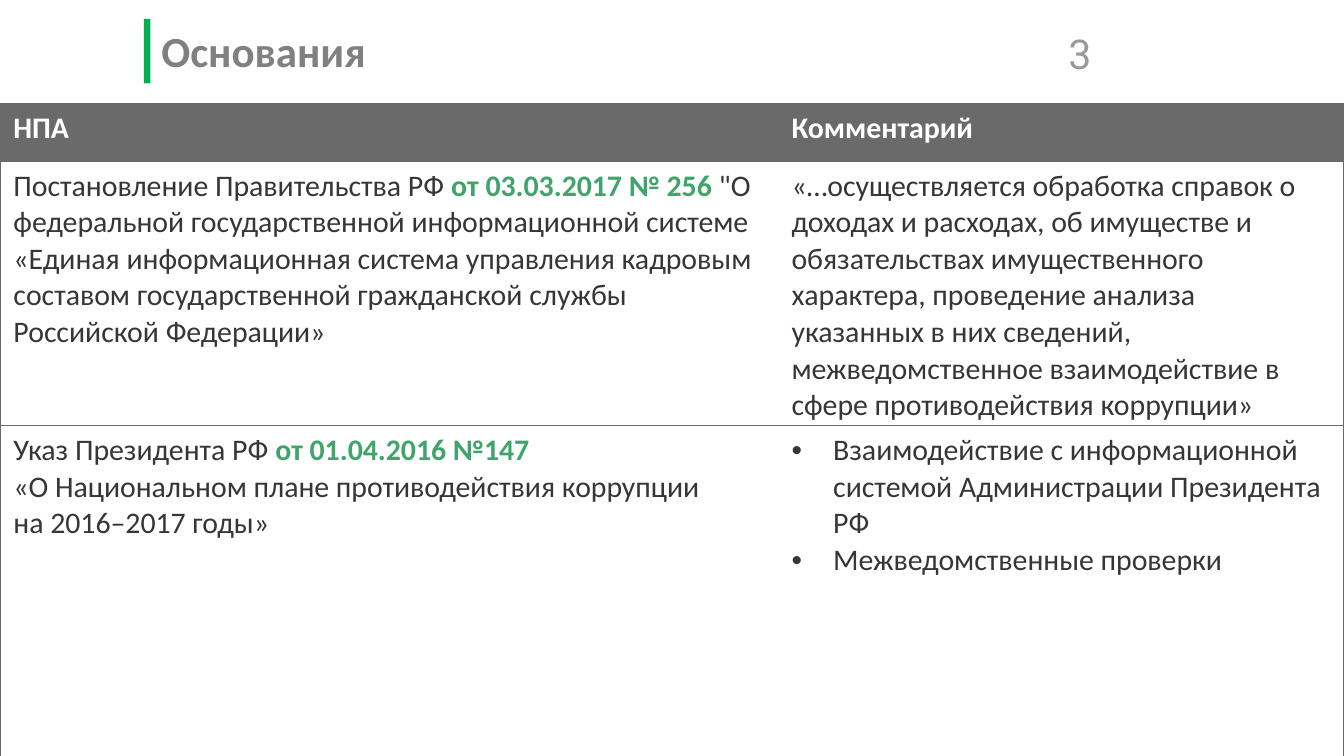
from typing import NamedTuple

from lxml.etree import SubElement
from pptx import Presentation
from pptx.dml.color import RGBColor
from pptx.enum.shapes import MSO_SHAPE
from pptx.enum.text import MSO_ANCHOR, MSO_AUTO_SIZE, PP_ALIGN
from pptx.oxml.ns import qn
from pptx.util import Inches, Pt

GREY, DARK, GREEN, WHITE = "6A6A6A", "363636", "3FA56A", "FFFFFF"
WIDE = 10
HIGH = WIDE * 9 / 16
COLS = (5.79, 4.21)
ROWS = (0.43, 0.43, 4.44)    # the middle row grows with its text
TOP, TALL = 0.77, 6.84
TIE = chr(160)               # no-break space


class Span(NamedTuple):
    text: str
    key: bool = False    # green and bold


class Cell(NamedTuple):
    paras: list[list[Span]]
    dots: bool = False   # bulleted


GRID = [
    [Cell([[Span("НПА")]]), Cell([[Span("Комментарий")]])],
    [
        Cell([[
            Span("Постановление Правительства РФ "),
            Span("от 03.03.2017 № 256 ", key=True),
            Span('"О федеральной государственной информационной системе '
                 "«Единая информационная система управления кадровым составом "
                 "государственной гражданской службы Российской Федерации»"),
        ]]),
        Cell([[Span("«…осуществляется обработка справок о доходах и расходах, "
                    "об имуществе и обязательствах имущественного характера, "
                    "проведение анализа указанных в них сведений, "
                    "межведомственное взаимодействие в сфере "
                    "противодействия коррупции»")]]),
    ],
    [
        Cell([[
            Span("Указ Президента РФ "),
            Span("от 01.04.2016 №147 ", key=True),
            Span(f"«О{TIE}Национальном плане противодействия коррупции "
                 f"на{TIE}2016–2017{TIE}годы»"),
        ]]),
        Cell([[Span("Взаимодействие с информационной системой "
                    "Администрации Президента РФ")],
              [Span("Межведомственные проверки")]], dots=True),
    ],
]


def rgb(code: str) -> RGBColor:
    return RGBColor.from_string(code)


def style(font, size: float, code: str, bold: bool = False,
          name: str = "Calibri") -> None:
    font.name, font.size, font.bold = name, Pt(size), bold
    font.color.rgb = rgb(code)


def pad(frame, left: float, top: float, right: float, low: float) -> None:
    frame.margin_left, frame.margin_top = Inches(left), Inches(top)
    frame.margin_right, frame.margin_bottom = Inches(right), Inches(low)


def edge(cell, sides: str) -> None:
    """Rule the named sides of a cell and clear the others."""
    props = cell._tc.get_or_add_tcPr()
    for side in "LRTB":
        line = SubElement(props, qn(f"a:ln{side}"), w=str(Pt(0.75)))
        if side in sides:
            fill = SubElement(line, qn("a:solidFill"))
            SubElement(fill, qn("a:srgbClr"), val=GREY)
        else:
            SubElement(line, qn("a:noFill"))


def bullet(para) -> None:
    props = para._p.get_or_add_pPr()
    props.set("marL", str(Inches(0.31)))
    props.set("indent", str(-Inches(0.31)))
    SubElement(props, qn("a:buFont"), typeface="Arial")
    SubElement(props, qn("a:buChar"), char="•")


def write(cell, data: Cell, head: bool) -> None:
    frame = cell.text_frame
    for i, spans in enumerate(data.paras):
        para = frame.add_paragraph() if i else frame.paragraphs[0]
        if data.dots:
            bullet(para)
        for span in spans:
            run = para.add_run()
            run.text = span.text
            code = GREEN if span.key else WHITE if head else DARK
            style(run.font, 16, code, span.key or head)


def table(slide) -> None:
    box = slide.shapes.add_table(len(ROWS), len(COLS), 0, Inches(TOP),
                                 Inches(WIDE), Inches(TALL))
    grid = box.table
    for col, width in zip(grid.columns, COLS):
        col.width = Inches(width)
    for row, height in zip(grid.rows, ROWS):
        row.height = Inches(height)
    box.height = Inches(TALL)
    for r, line in enumerate(GRID):
        for c, data in enumerate(line):
            cell = grid.cell(r, c)
            edge(cell, "TB" + "LR"[c])
            if r == 0:
                cell.fill.solid()
                cell.fill.fore_color.rgb = rgb(GREY)
            else:
                cell.fill.background()
            write(cell, data, r == 0)


def main() -> None:
    deck = Presentation()
    deck.slide_width, deck.slide_height = Inches(WIDE), Inches(HIGH)
    slide = deck.slides.add_slide(deck.slide_layouts[5])

    # Green bar beside the title
    bar = slide.shapes.add_shape(MSO_SHAPE.RECTANGLE, Inches(1.07),
                                 Inches(0.14), Inches(0.05), Inches(0.48))
    bar.shadow.inherit = False
    bar.fill.solid()
    bar.fill.fore_color.rgb = rgb("00B050")
    bar.line.fill.background()

    # Page number
    page = slide.shapes.add_textbox(Inches(7.6), Inches(0.17),
                                    Inches(0.59), Inches(0.44)).text_frame
    page.word_wrap = True
    pad(page, 0.07, 0.04, 0.07, 0.04)
    para = page.paragraphs[0]
    para.text, para.alignment = "3", PP_ALIGN.RIGHT
    style(para.font, 22, "9A9A9A", name="Roboto")

    # Title
    title = slide.shapes.title
    title.left, title.top = Inches(1.1), Inches(0.1)
    title.width, title.height = Inches(6.34), Inches(0.59)
    frame = title.text_frame
    frame.auto_size = MSO_AUTO_SIZE.NONE
    frame.vertical_anchor = MSO_ANCHOR.MIDDLE
    pad(frame, 0.1, 0.1, 0.1, 0.05)
    para = frame.paragraphs[0]
    para.text, para.alignment = "Основания", PP_ALIGN.LEFT
    para.line_spacing = 0.7
    style(para.font, 23, "808080", True)

    # Legal acts and comments
    table(slide)
    deck.save("out.pptx")


if __name__ == "__main__":
    main()
